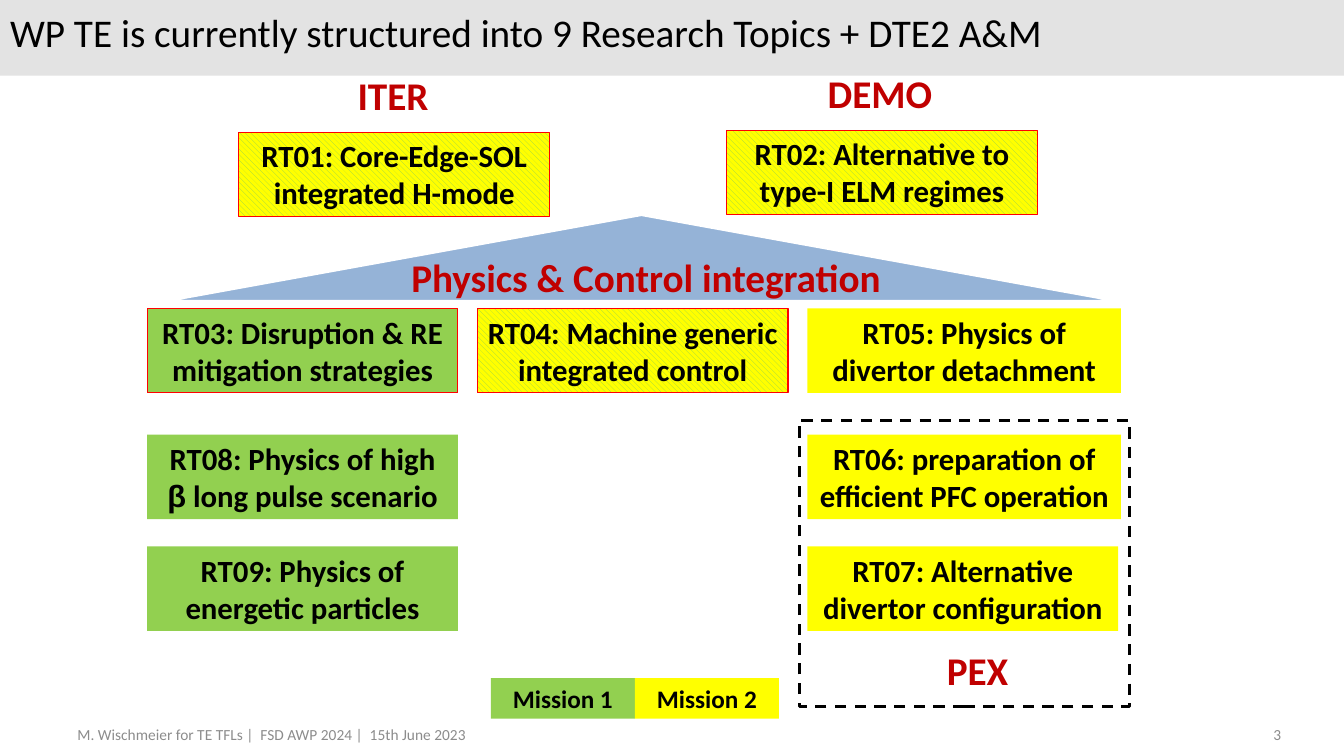
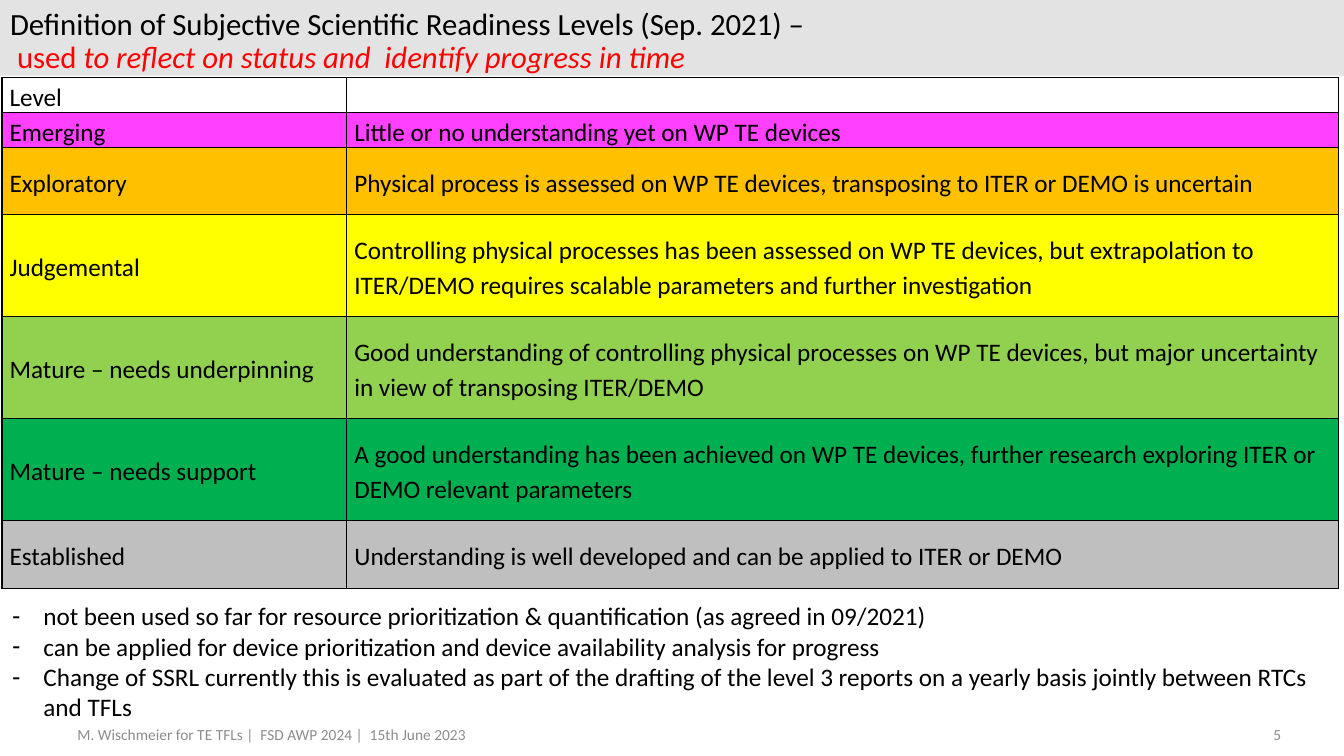
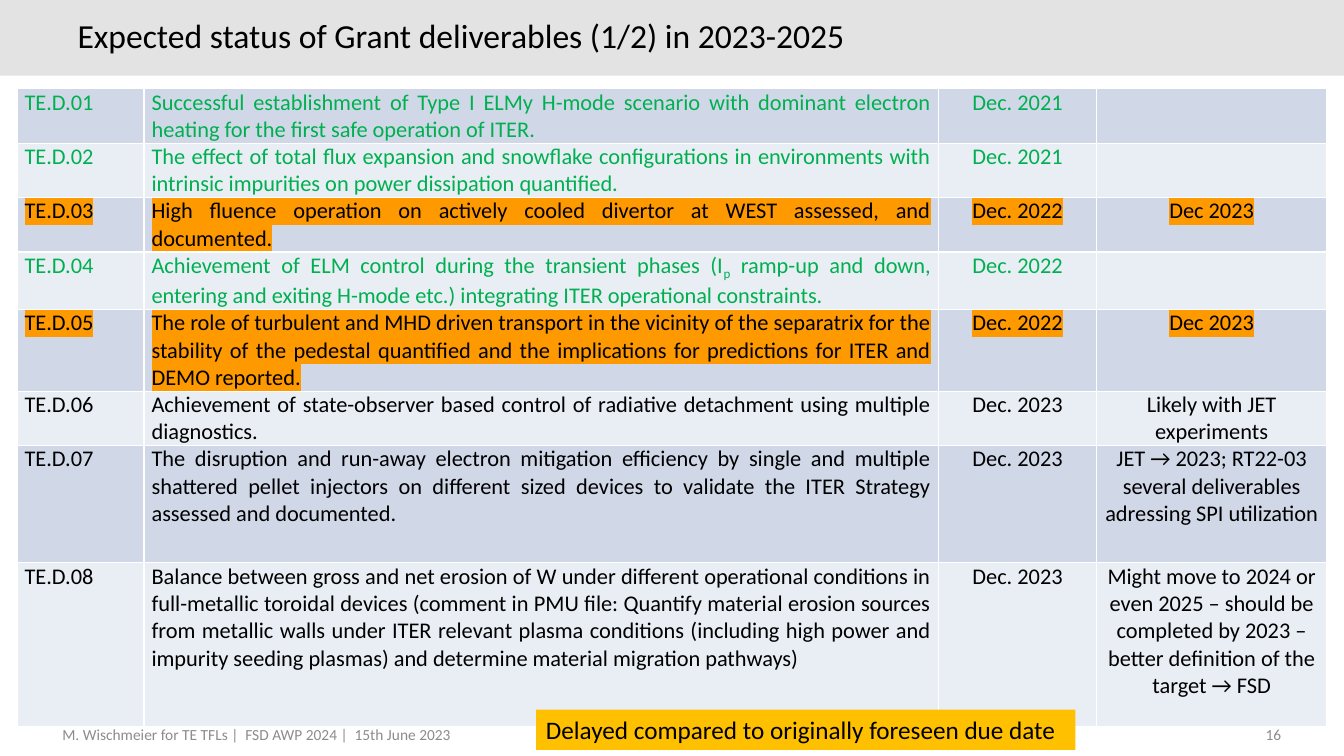
import dataclasses

import lxml.etree
import pptx
import pptx.dml.color
import pptx.enum.dml
import pptx.enum.shapes
import pptx.enum.text
import pptx.oxml.ns
import pptx.util

Cm = pptx.util.Cm
Pt = pptx.util.Pt
RGBColor = pptx.dml.color.RGBColor
ALIGN = pptx.enum.text.PP_ALIGN
ANCHOR = pptx.enum.text.MSO_ANCHOR
SHAPE = pptx.enum.shapes.MSO_SHAPE
qn = pptx.oxml.ns.qn

BLACK = RGBColor(0x00, 0x00, 0x00)
WHITE = RGBColor(0xFF, 0xFF, 0xFF)
BAND_GREY = RGBColor(0xE3, 0xE3, 0xE3)
FOOTER_GREY = RGBColor(0x8C, 0x8C, 0x8C)
LEVEL_GREY = RGBColor(0xBF, 0xBF, 0xBF)
RED = RGBColor(0xFF, 0x00, 0x00)
DARK_RED = RGBColor(0xC0, 0x00, 0x00)
YELLOW = RGBColor(0xFF, 0xFF, 0x00)
LIGHT_GREEN = RGBColor(0x92, 0xD0, 0x50)
GREEN = RGBColor(0x00, 0xB0, 0x50)
AMBER = RGBColor(0xFF, 0xC0, 0x00)
ORANGE = RGBColor(0xFF, 0x99, 0x00)
MAGENTA = RGBColor(0xFF, 0x40, 0xFF)
ROOF_BLUE = RGBColor(0x95, 0xB3, 0xD7)
ROW_BLUES = (RGBColor(0xD0, 0xD8, 0xE8), RGBColor(0xE9, 0xED, 0xF4))
BOTH_MISSIONS = (LIGHT_GREEN, YELLOW)

FONT = "Calibri"
FOOTER = "M. Wischmeier for TE TFLs |  FSD AWP 2024 |  15th June 2023"


def format_run(run, size, color, bold=False, italic=False, font=FONT, highlight=None, baseline=None):
    run.font.size = Pt(size)
    run.font.bold = bold
    run.font.italic = italic
    run.font.color.rgb = color
    run.font.name = font
    properties = run.font._element
    if highlight is not None:
        marker = lxml.etree.Element(qn("a:highlight"))
        lxml.etree.SubElement(marker, qn("a:srgbClr"), val=str(highlight))
        properties.find(qn("a:solidFill")).addnext(marker)
    if baseline:
        properties.set("baseline", str(baseline * 1000))


def write(frame, text, size=18, color=BLACK, align=ALIGN.LEFT, anchor=ANCHOR.TOP,
          line_spacing=1.0, after=0, bullet=None, indent=0, **run_format):
    frame.word_wrap = True
    frame.vertical_anchor = anchor
    for number, content in enumerate(text if isinstance(text, list) else [text]):
        paragraph = frame.add_paragraph() if number else frame.paragraphs[0]
        paragraph.alignment = align
        paragraph.line_spacing = line_spacing
        paragraph.space_before = Pt(0)
        paragraph.space_after = Pt(after)
        if bullet:
            properties = paragraph._p.get_or_add_pPr()
            properties.set("marL", str(Cm(indent)))
            properties.set("indent", str(-Cm(indent)))
            lxml.etree.SubElement(properties, qn("a:buChar"), char=bullet)
        for part in content if isinstance(content, tuple) else (content,):
            words, changes = part if isinstance(part, list) else (part, {})
            if words == "\n":
                paragraph.add_line_break()
            elif words:
                run = paragraph.add_run()
                run.text = words
                format_run(run, **{"size": size, "color": color, **run_format, **changes})


@dataclasses.dataclass
class Deck:
    presentation: object
    slide: object = None

    def start(self, title, number, size, title_box, footer_left=1.7, layout=5):
        self.slide = self.presentation.slides.add_slide(self.presentation.slide_layouts[layout])
        band = self.box((0, 0, 33.87, 1.91), fill=BAND_GREY)
        self.slide.shapes._spTree.insert(2, band._element)
        self.placeholder(self.slide.shapes.title, title_box, title, size=size,
                         anchor=ANCHOR.MIDDLE, line_spacing=Pt(24))
        self.label((footer_left, 18.14, 11.8, 0.9), FOOTER, size=11, color=FOOTER_GREY)
        self.label((30.53, 18.14, 2.01, 0.56), str(number), size=11, color=FOOTER_GREY,
                   align=ALIGN.RIGHT)

    def placeholder(self, holder, place, text, **text_format):
        holder.left, holder.top, holder.width, holder.height = map(Cm, place)
        holder.text_frame.auto_size = pptx.enum.text.MSO_AUTO_SIZE.NONE
        write(holder.text_frame, text, **text_format)

    def label(self, place, text, **text_format):
        write(self.slide.shapes.add_textbox(*map(Cm, place)).text_frame, text, **text_format)

    def box(self, place, text="", fill=None, line=None, line_width=0.75, dash=None,
            outline=SHAPE.RECTANGLE, **text_format):
        shape = self.slide.shapes.add_shape(outline, *map(Cm, place))
        shape.shadow.inherit = False
        if fill is None:
            shape.fill.background()
        elif fill is BOTH_MISSIONS:
            shape.fill.patterned()
            shape.fill.pattern = pptx.enum.dml.MSO_PATTERN.WIDE_DOWNWARD_DIAGONAL
            shape.fill.fore_color.rgb, shape.fill.back_color.rgb = fill
        else:
            shape.fill.solid()
            shape.fill.fore_color.rgb = fill
        if line is None:
            shape.line.fill.background()
        else:
            shape.line.color.rgb = line
            shape.line.width = Pt(line_width)
            shape.line.dash_style = dash
        if text:
            write(shape.text_frame, text, **text_format)
        return shape

    def table(self, left, top, widths, heights, border):
        grid = self.slide.shapes.add_table(
            len(heights), len(widths), Cm(left), Cm(top), Cm(sum(widths)), Cm(sum(heights))).table
        grid.first_row = grid.horz_banding = False
        for column, width in zip(grid.columns, widths):
            column.width = Cm(width)
        for row, height in zip(grid.rows, heights):
            row.height = Cm(height)
        for cell in grid.iter_cells():
            cell.margin_left = cell.margin_right = Cm(0.19)
            cell.margin_top = cell.margin_bottom = 0
            for side in ("a:lnL", "a:lnR", "a:lnT", "a:lnB"):
                edge = lxml.etree.SubElement(cell._tc.get_or_add_tcPr(), qn(side), w=str(Pt(1)))
                paint = lxml.etree.SubElement(edge, qn("a:solidFill"))
                lxml.etree.SubElement(paint, qn("a:srgbClr"), val=str(border))
        return grid

    def cell(self, cell, text, fill=None, anchor=ANCHOR.TOP, **text_format):
        if fill is None:
            cell.fill.background()
        else:
            cell.fill.solid()
            cell.fill.fore_color.rgb = fill
        write(cell.text_frame, text, **text_format)
        cell.text_frame.word_wrap = None
        cell.text_frame.vertical_anchor = None
        cell.vertical_anchor = anchor


def research_topics(deck):
    deck.start("WP TE is currently structured into 9 Research Topics + DTE2 A&M", 3, 28,
               (0, 0.33, 30.53, 1.27))
    first, second, third = (3.71 + 8.32 * column for column in range(3))
    upper, middle, lower = 7.77, 10.95, 13.77
    narrow, wide = 7.83, 7.9
    topics = [
        ("RT01: Core-Edge-SOL integrated H-mode", 6.02, 3.33, narrow, BOTH_MISSIONS, RED),
        ("RT02: Alternative to type-I ELM regimes", 18.31, 3.28, narrow, BOTH_MISSIONS, RED),
        ("RT03: Disruption & RE mitigation strategies", first, upper, narrow, LIGHT_GREEN, RED),
        ("RT04: Machine generic integrated control", second, upper, narrow, BOTH_MISSIONS, RED),
        ("RT05: Physics of divertor detachment", third, upper, wide, YELLOW, None),
        ("RT06: preparation of efficient PFC operation", third, middle, wide, YELLOW, None),
        ("RT07: Alternative divertor configuration", third, lower, narrow, YELLOW, None),
        (("RT08: Physics of high ", ["β", {"font": "Arial"}], " long pulse scenario"),
         first, middle, narrow, LIGHT_GREEN, None),
        ("RT09: Physics of energetic particles", first, lower, narrow, LIGHT_GREEN, None),
    ]
    for topic, left, top, width, fill, line in topics:
        deck.box((left, top, width, 2.13), topic, fill, line, size=22, bold=True,
                 align=ALIGN.CENTER)
    for number, fill in enumerate(BOTH_MISSIONS):
        deck.box((12.37 + 3.63 * number, 17.09, 3.63, 1.02), f"Mission {number + 1}", fill,
                 size=18, bold=True, align=ALIGN.CENTER)
    deck.box((20.14, 10.59, 8.33, 7.21), line=BLACK, line_width=2,
             dash=pptx.enum.dml.MSO_LINE.DASH)
    roof = deck.box((4.14, 5.41, 24.05, 2.18), fill=ROOF_BLUE, line=WHITE, line_width=2,
                    outline=SHAPE.ISOSCELES_TRIANGLE)
    roof.adjustments[0] = 0.5
    headings = [
        ("PEX", 23.11, 16.15, 3.05),
        ("ITER", 8.38, 1.68, 3.05),
        ("DEMO", 20.37, 1.63, 3.61),
        ("Physics & Control integration", 9.93, 6.25, 12.7),
    ]
    for heading, left, top, width in headings:
        deck.label((left, top, width, 1.45), heading, size=28, color=DARK_RED, bold=True,
                   align=ALIGN.CENTER)


def readiness_levels(deck):
    title = ("Definition of Subjective Scientific Readiness Levels (Sep. 2021) –", "\n",
             [" used ", {"color": RED}],
             ["to reflect on status and  identify progress in time", {"color": RED, "italic": True}])
    deck.start(title, 5, 22, (0, 0.41, 30.94, 1.27), layout=1)
    levels = [
        ("Level", "", None, 0.81),
        ("Emerging", "Little or no understanding yet on WP TE devices", MAGENTA, 0.81),
        ("Exploratory", "Physical process is assessed on WP TE devices, transposing to ITER or "
         "DEMO is uncertain", AMBER, 1.7),
        ("Judgemental", "Controlling physical processes has been assessed on WP TE devices, but "
         "extrapolation to ITER/DEMO requires scalable parameters and further investigation",
         YELLOW, 2.57),
        ("Mature – needs underpinning", "Good understanding of controlling physical processes on "
         "WP TE devices, but major uncertainty in view of transposing ITER/DEMO",
         LIGHT_GREEN, 2.57),
        ("Mature – needs support", "A good understanding has been achieved on WP TE devices, "
         "further research exploring ITER or DEMO relevant parameters", GREEN, 2.57),
        ("Established", "Understanding is well developed and can be applied to ITER or DEMO",
         LEVEL_GREY, 1.7),
    ]
    grid = deck.table(0.05, 1.96, (8.69, 24.99), [level[-1] for level in levels], BLACK)
    for row, (level, meaning, fill, _) in zip(grid.rows, levels):
        for cell, text in zip(row.cells, (level, meaning)):
            deck.cell(cell, text, fill, anchor=ANCHOR.MIDDLE if fill else ANCHOR.TOP,
                      line_spacing=1.15, after=10)
    remarks = [
        "not been used so far for resource prioritization & quantification (as agreed in 09/2021)",
        "can be applied for device prioritization and device availability analysis for progress",
        "Change of SSRL currently this is evaluated as part of the drafting of the level 3 reports "
        "on a yearly basis jointly between RTCs and TFLs",
    ]
    deck.placeholder(deck.slide.placeholders[1], (0.05, 15.01, 33.3, 3.33), remarks,
                     bullet="-", indent=0.79)


def grant_deliverables(deck):
    deck.start("Expected status of Grant deliverables (1/2) in 2023-2025", 16, 24,
               (1.7, 0.33, 27.94, 1.27), footer_left=1.32)
    achieved = {"color": GREEN}
    delayed = {"highlight": ORANGE}
    pending = {}
    deliverables = [
        ("Successful establishment of Type I ELMy H-mode scenario with dominant electron heating "
         "for the first safe operation of ITER.", "Dec. 2021", "", achieved, 1.37),
        ("The effect of total flux expansion and snowflake configurations in environments with "
         "intrinsic impurities on power dissipation quantified.", "Dec. 2021", "", achieved, 1.37),
        ("High fluence operation on actively cooled divertor at WEST assessed, and documented.",
         "Dec. 2022", "Dec 2023", delayed, 1.37),
        (("Achievement of ELM control during the transient phases (I", ["p", {"baseline": -25}],
          " ramp-up and down, entering and exiting H-mode etc.) integrating ITER operational "
          "constraints."), "Dec. 2022", "", achieved, 1.37),
        ("The role of turbulent and MHD driven transport in the vicinity of the separatrix for the "
         "stability of the pedestal quantified and the implications for predictions for ITER and "
         "DEMO reported.", "Dec. 2022", "Dec 2023", delayed, 2.06),
        ("Achievement of state-observer based control of radiative detachment using multiple "
         "diagnostics.", "Dec. 2023", "Likely with JET experiments", pending, 1.37),
        ("The disruption and run-away electron mitigation efficiency by single and multiple "
         "shattered pellet injectors on different sized devices to validate the ITER Strategy "
         "assessed and documented.", "Dec. 2023",
         "JET → 2023; RT22-03 several deliverables adressing SPI utilization", pending, 2.95),
        ("Balance between gross and net erosion of W under different operational conditions in "
         "full-metallic toroidal devices (comment in PMU file: Quantify material erosion sources "
         "from metallic walls under ITER relevant plasma conditions (including high power and "
         "impurity seeding plasmas) and determine material migration pathways)", "Dec. 2023",
         "Might move to 2024 or even 2025 – should be completed by 2023 – better definition of "
         "the target → FSD", pending, 4.14),
    ]
    grid = deck.table(0.43, 2.24, (3.2, 20.02, 3.99, 5.79),
                      [deliverable[-1] for deliverable in deliverables], WHITE)
    alignments = (ALIGN.JUSTIFY, ALIGN.JUSTIFY, ALIGN.CENTER, ALIGN.CENTER)
    for number, (goal, due, outlook, status, _) in enumerate(deliverables):
        texts = (f"TE.D.{number + 1:02}", goal, due, outlook)
        for cell, text, align in zip(grid.rows[number].cells, texts, alignments):
            deck.cell(cell, text, ROW_BLUES[number % 2], size=16, align=align, **status)
    deck.box((13.51, 17.88, 13.59, 1.02), "Delayed compared to originally foreseen due date",
             AMBER)


def main():
    presentation = pptx.Presentation()
    presentation.slide_width, presentation.slide_height = Cm(33.87), Cm(19.05)
    deck = Deck(presentation)
    research_topics(deck)
    readiness_levels(deck)
    grant_deliverables(deck)
    presentation.save("out.pptx")


if __name__ == "__main__":
    main()
